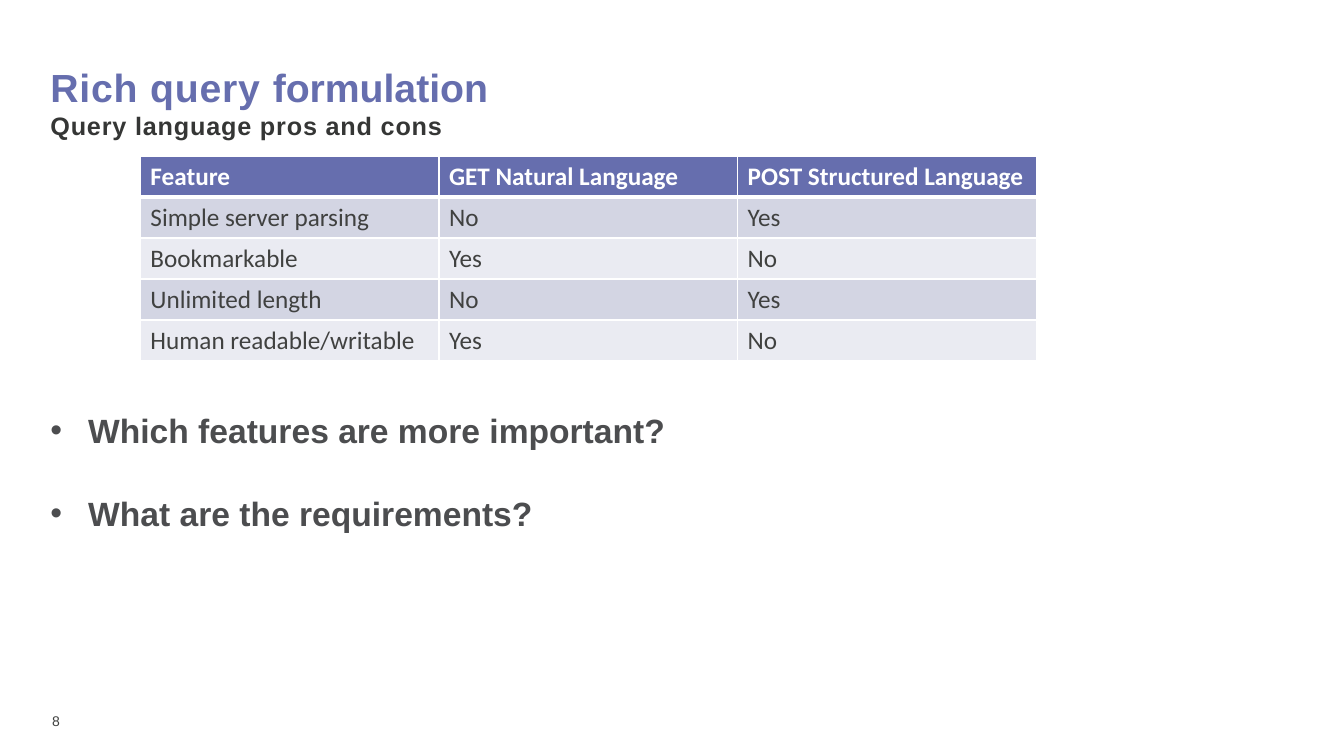
from lxml import etree
from pptx import Presentation
from pptx.dml.color import RGBColor
from pptx.oxml import ns
from pptx.util import Pt

INDIGO = "666EAE"
WHITE = "FFFFFF"
GREY = "404140"
BANDS = ("D3D5E3", "EAEBF2")
FEATURES = [
    ("Feature", "GET Natural Language", "POST Structured Language"),
    ("Simple server parsing", "No", "Yes"),
    ("Bookmarkable", "Yes", "No"),
    ("Unlimited length", "No", "Yes"),
    ("Human readable/writable", "Yes", "No"),
]
QUESTIONS = ["Which features are more important?", "What are the requirements?"]


def color(value):
    return RGBColor.from_string(value)


def style(font, size, value, name="Arial", bold=False):
    font.size, font.name, font.bold = Pt(size), name, bold
    font.color.rgb = color(value)


def add_text_frame(page, left, top, width, height):
    """Add a wrapping text box without margins and return its frame."""
    frame = page.shapes.add_textbox(Pt(left), Pt(top), Pt(width), Pt(height)).text_frame
    frame.word_wrap = True
    frame.margin_left = frame.margin_top = frame.margin_right = frame.margin_bottom = 0
    return frame


def add_span(para, words, size, value, spacing):
    """Add a bold run with letter spacing in hundredths of a point."""
    span = para.add_run()
    span.text = words
    style(span.font, size, value, bold=True)
    span.font._element.set("spc", str(spacing))


def add_heading(page, left, top, width, height):
    para = add_text_frame(page, left, top, width, height).paragraphs[0]
    add_span(para, "Rich query ", 28, INDIGO, 60)
    add_span(para, "formulation", 28, INDIGO, 0)
    para.add_line_break()
    add_span(para, "Query language pros and cons", 18, "353635", 60)


def set_borders(cell, bottom):
    """Draw white borders, 1 pt wide except for the given bottom width."""
    properties = cell._tc.get_or_add_tcPr()
    widths = {"lnL": 1, "lnR": 1, "lnT": 1, "lnB": bottom}
    for position, (side, width) in enumerate(widths.items()):
        line = etree.Element(ns.qn("a:" + side), w=str(Pt(width)))
        fill = etree.SubElement(line, ns.qn("a:solidFill"))
        etree.SubElement(fill, ns.qn("a:srgbClr"), val=WHITE)
        properties.insert(position, line)


def add_feature_table(page, left, top, width, height):
    table = page.shapes.add_table(
        len(FEATURES), len(FEATURES[0]), Pt(left), Pt(top), Pt(width), Pt(height)
    ).table
    for row, values in enumerate(FEATURES):
        header = row == 0
        for column, value in enumerate(values):
            cell = table.cell(row, column)
            cell.text = value
            cell.fill.solid()
            cell.fill.fore_color.rgb = color(INDIGO if header else BANDS[(row - 1) % 2])
            style(cell.text_frame.paragraphs[0].font, 18,
                  WHITE if header else GREY, "Calibri", header)
            set_borders(cell, 3 if header else 1)


def add_questions(page, left, top, width, height):
    frame = add_text_frame(page, left, top, width, height)
    for index, question in enumerate(QUESTIONS):
        para = frame.paragraphs[0] if index == 0 else frame.add_paragraph()
        para.text = question
        if index:
            para.space_before = Pt(30.3)
        properties = para._p.get_or_add_pPr()
        properties.set("marL", str(Pt(27)))
        properties.set("indent", str(Pt(-27)))
        etree.SubElement(properties, ns.qn("a:buFont"), typeface="Arial")
        etree.SubElement(properties, ns.qn("a:buChar"), char="•")
        style(para.font, 24, "4C4D4F", bold=True)


def add_page_number(page, left, top, width, height):
    para = add_text_frame(page, left, top, width, height).paragraphs[0]
    para.text = "8"
    style(para.font, 10, GREY)


def main():
    deck = Presentation()
    deck.slide_width, deck.slide_height = Pt(960), Pt(540)
    page = deck.slides.add_slide(deck.slide_layouts[6])
    add_heading(page, 36, 45, 575, 55)
    add_feature_table(page, 100.3, 111.5, 640, 146.5)
    add_questions(page, 36, 293, 888, 176)
    add_page_number(page, 37.2, 509, 47, 22)
    deck.save("out.pptx")


if __name__ == "__main__":
    main()
